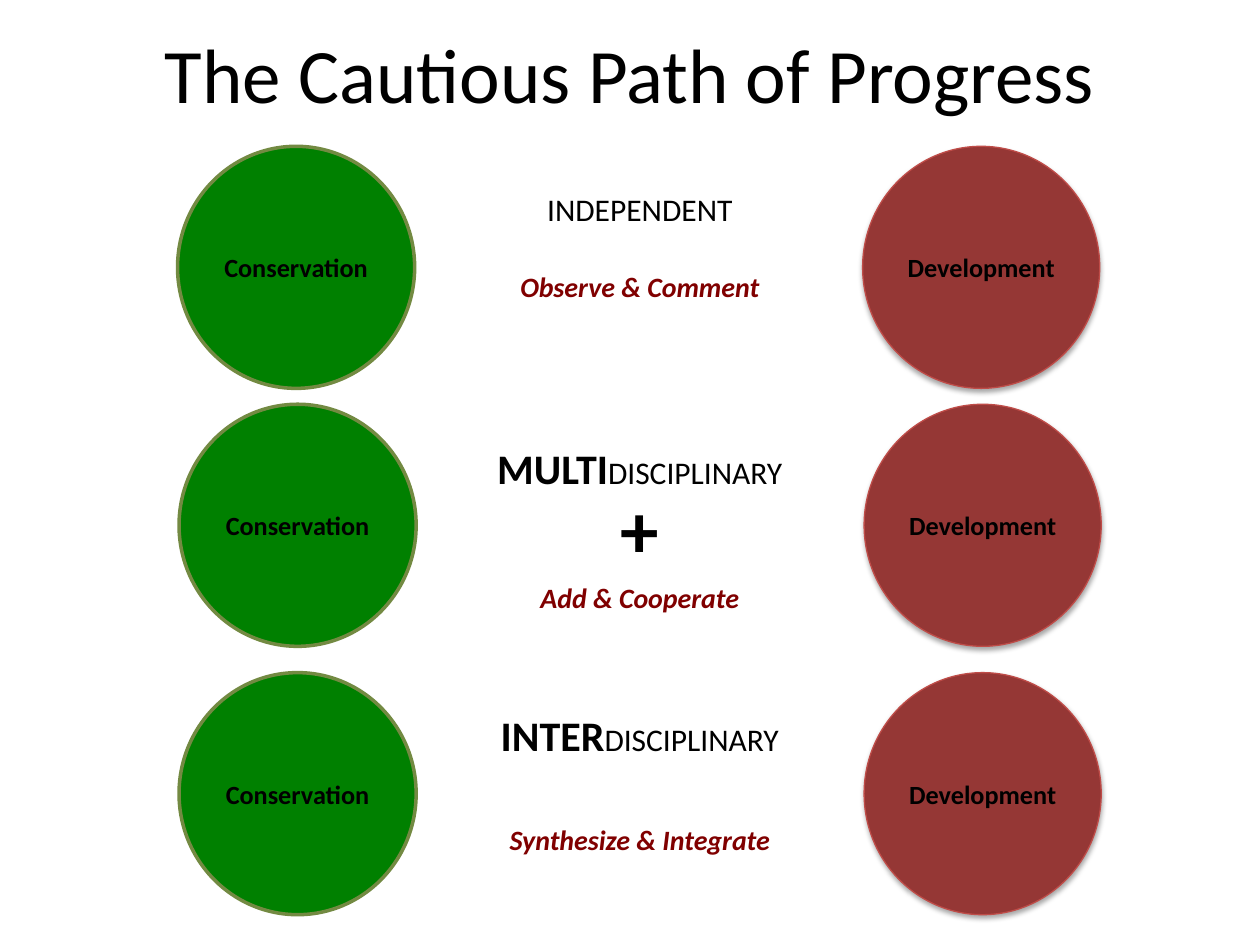
from dataclasses import dataclass

import lxml.etree
import pptx
import pptx.dml.color
import pptx.enum.shapes
import pptx.enum.text
import pptx.oxml.ns
import pptx.util

Cm = pptx.util.Cm
Pt = pptx.util.Pt


@dataclass(frozen=True)
class Theme:
    font: str = "Calibri"
    ink: str = "000000"
    motto: str = "800000"
    title_pt: int = 44
    prefix_pt: int = 24
    heading_pt: int = 18
    motto_pt: int = 16
    label_pt: int = 15


@dataclass(frozen=True)
class Circle:
    label: str
    offset: float
    fill: str
    line: str
    line_pt: float
    shadow: bool


@dataclass(frozen=True)
class Stage:
    prefix: str
    heading: str
    motto: str
    circle_left: float
    circle_top: float
    heading_top: float
    heading_height: float
    motto_top: float
    motto_width: float


THEME = Theme()
CENTER_X = 12.9
CIRCLE_W, CIRCLE_H = 4.78, 4.88
LABEL_W, LABEL_H = 3.48, 0.89
HEADING_W, MOTTO_H = 7.26, 0.94

CIRCLES = [
    Circle("Conservation", 0, "008000", "738A42", 2, False),
    Circle("Development", 13.81, "953735", "BF4C48", 0.75, True),
]
STAGES = [
    Stage("", "INDEPENDENT", "Observe & Comment",
          3.58, 2.95, 3.71, 1.02, 5.31, 5.97),
    Stage("MULTI", "DISCIPLINARY", "Add & Cooperate",
          3.61, 8.15, 8.79, 1.27, 11.58, 5.28),
    Stage("INTER", "DISCIPLINARY", "Synthesize & Integrate",
          3.61, 13.56, 14.17, 1.27, 16.46, 6.96),
]


def rgb(value: str) -> pptx.dml.color.RGBColor:
    return pptx.dml.color.RGBColor.from_string(value)


def add_run(p, text: str, *, size: float, color: str = THEME.ink,
            bold: bool = False, italic: bool = False) -> None:
    r = p.add_run()
    r.text = text
    r.font.name = THEME.font
    r.font.size = Pt(size)
    r.font.color.rgb = rgb(color)
    r.font.bold = bold
    r.font.italic = italic


def add_box(shapes, center: float, top: float, width: float, height: float):
    sp = shapes.add_textbox(Cm(center - width / 2), Cm(top), Cm(width), Cm(height))
    tf = sp.text_frame
    tf.word_wrap = True
    p = tf.paragraphs[0]
    p.alignment = pptx.enum.text.PP_ALIGN.CENTER
    return tf, p


def add_shadow(sp) -> None:
    qn = pptx.oxml.ns.qn
    effects = sp._element.spPr.find(qn("a:effectLst"))
    shadow = lxml.etree.SubElement(
        effects, qn("a:outerShdw"), blurRad=str(Pt(3.1)), dist=str(Pt(1.8)),
        dir="5400000", rotWithShape="0")
    color = lxml.etree.SubElement(shadow, qn("a:srgbClr"), val=THEME.ink)
    lxml.etree.SubElement(color, qn("a:alpha"), val="35000")


def draw_circle(slide, circle: Circle, left: float, top: float) -> None:
    shapes = slide.shapes.add_group_shape().shapes
    sp = shapes.add_shape(pptx.enum.shapes.MSO_SHAPE.OVAL,
                          Cm(left), Cm(top), Cm(CIRCLE_W), Cm(CIRCLE_H))
    sp.fill.solid()
    sp.fill.fore_color.rgb = rgb(circle.fill)
    sp.line.color.rgb = rgb(circle.line)
    sp.line.width = Pt(circle.line_pt)
    sp.shadow.inherit = False
    if circle.shadow:
        add_shadow(sp)
    _, p = add_box(shapes, left + CIRCLE_W / 2,
                   top + (CIRCLE_H - LABEL_H) / 2, LABEL_W, LABEL_H)
    add_run(p, circle.label, size=THEME.label_pt, bold=True)


def draw_stage(slide, stage: Stage) -> None:
    for circle in CIRCLES:
        draw_circle(slide, circle, stage.circle_left + circle.offset, stage.circle_top)
    _, p = add_box(slide.shapes, CENTER_X, stage.heading_top,
                   HEADING_W, stage.heading_height)
    if stage.prefix:
        add_run(p, stage.prefix, size=THEME.prefix_pt, bold=True)
    add_run(p, stage.heading, size=THEME.heading_pt)
    _, p = add_box(slide.shapes, CENTER_X, stage.motto_top, stage.motto_width, MOTTO_H)
    add_run(p, stage.motto, size=THEME.motto_pt, color=THEME.motto,
            bold=True, italic=True)


def main() -> None:
    prs = pptx.Presentation()
    prs.slide_width, prs.slide_height = Cm(25.4), Cm(19.05)
    slide = prs.slides.add_slide(prs.slide_layouts[6])

    tf, p = add_box(slide.shapes, 12.7, 0.38, 22.86, 2.16)
    tf.vertical_anchor = pptx.enum.text.MSO_ANCHOR.MIDDLE
    add_run(p, "The Cautious Path of Progress", size=THEME.title_pt)

    for stage in STAGES:
        draw_stage(slide, stage)

    _, p = add_box(slide.shapes, CENTER_X, 9.58, 3.12, 2.13)
    add_run(p, "+", size=THEME.title_pt, bold=True)

    prs.save("out.pptx")


if __name__ == "__main__":
    main()
